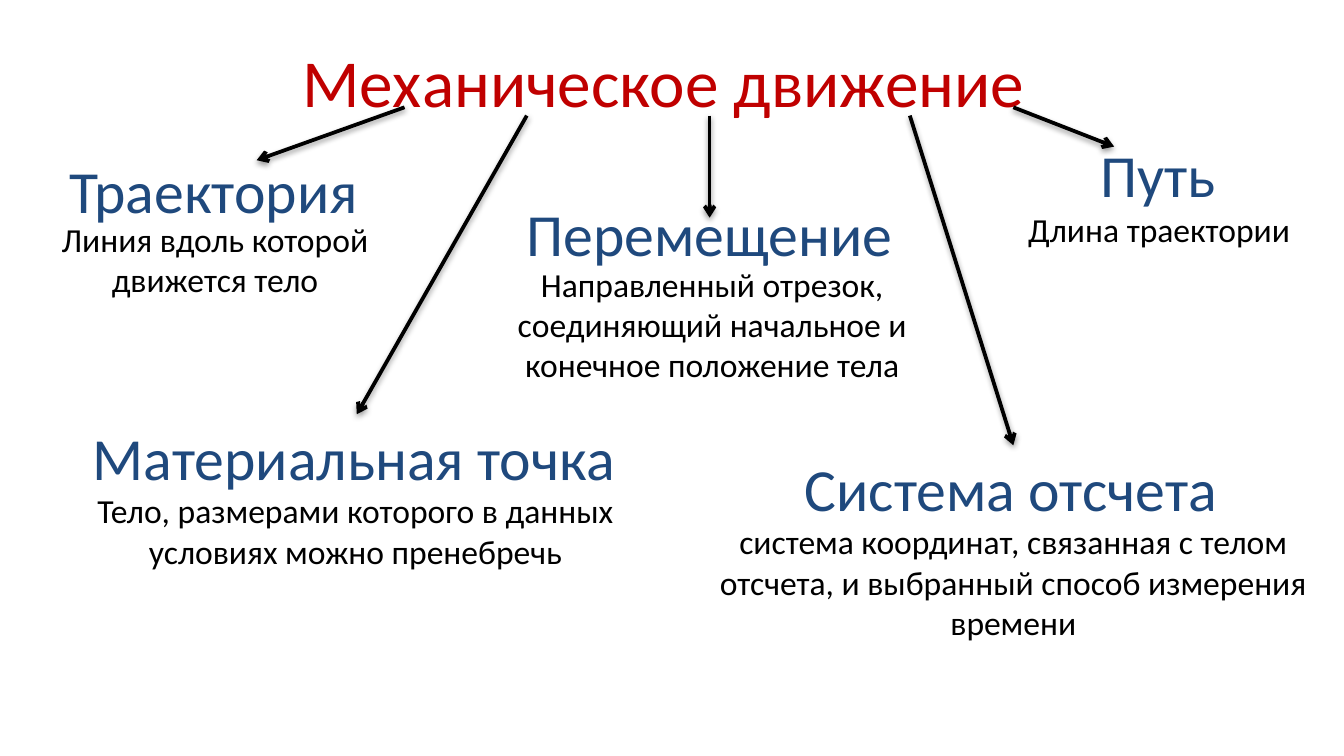
from dataclasses import dataclass
from typing import Optional

from lxml.etree import SubElement as Sub
from pptx import Presentation as Deck
from pptx.dml.color import RGBColor as Rgb
from pptx.enum.shapes import MSO_CONNECTOR as Link
from pptx.enum.text import MSO_ANCHOR as Anchor, MSO_AUTO_SIZE as Fit, PP_ALIGN as Align
from pptx.oxml.ns import qn
from pptx.util import Inches, Pt

RED = Rgb(0xC0, 0x00, 0x00)
BLUE = Rgb(0x1F, 0x49, 0x7D)
BLACK = Rgb(0x00, 0x00, 0x00)
FONT = "Calibri"
WIDE = Inches(10)
HIGH = WIDE * 9 // 16
HEAD = 11.4


@dataclass(frozen=True)
class Box:
    x: float
    y: float
    w: float
    h: float


@dataclass(frozen=True)
class Term:
    name: str
    top: Box
    note: str
    low: Box
    wrap: bool
    tail: tuple[float, float]
    tip: Optional[tuple[float, float]] = None


TERMS = [
    Term("Траектория", Box(4.2, 19.4, 23.7, HEAD),
         "Линия вдоль которой движется тело", Box(-0.4, 28.1, 32.8, 12.6),
         True, (30.1, 14.2), (19.1, 21.2)),
    Term("Путь", Box(80.9, 17.4, 10.7, HEAD),
         "Длина траектории", Box(75.4, 26.8, 21.7, 7.1),
         False, (75.4, 14.2), (82.9, 19.4)),
    Term("Перемещение", Box(38.2, 25.1, 29.5, HEAD),
         "Направленный отрезок, соединяющий начальное и конечное положение тела",
         Box(34.7, 34, 36.6, 18), True, (52.8, 15.3), (52.8, 28.8)),
    Term("Система отсчета", Box(58.9, 58.9, 33, HEAD),
         "система координат, связанная с телом отсчета, и выбранный способ измерения времени",
         Box(50.4, 68.1, 50, 18), True, (67.7, 15.3)),
    Term("Материальная точка", Box(5.9, 54.8, 41.3, HEAD),
         "Тело, размерами которого в данных условиях можно пренебречь",
         Box(6, 64, 40.9, 12.6), True, (39.2, 15.3)),
]


def across(part: float) -> int:
    return round(WIDE * part / 100)


def down(part: float) -> int:
    return round(HIGH * part / 100)


def write(shape, box: Box, text: str, size: int, tint: Rgb, wrap: bool, align) -> None:
    shape.left, shape.top = across(box.x), down(box.y)
    shape.width, shape.height = across(box.w), down(box.h)
    frame = shape.text_frame
    frame.word_wrap = wrap
    frame.auto_size = Fit.SHAPE_TO_FIT_TEXT
    frame.vertical_anchor = Anchor.TOP
    line = frame.paragraphs[0]
    line.alignment = align
    run = line.add_run()
    run.text = text
    run.font.name, run.font.size = FONT, Pt(size)
    run.font.color.rgb = tint


def label(slide, box: Box, text: str, size: int, tint: Rgb, wrap: bool, align):
    shape = slide.shapes.add_textbox(0, 0, 0, 0)
    write(shape, box, text, size, tint, wrap, align)
    return shape


def arrow(slide, term: Term, head) -> None:
    tip = term.tip or (term.top.x + term.top.w / 2, term.top.y)
    line = slide.shapes.add_connector(
        Link.STRAIGHT, across(term.tail[0]), down(term.tail[1]),
        across(tip[0]), down(tip[1]))
    if term.tip is None:
        line.end_connect(head, 0)
    line.line.color.rgb = BLACK
    line.line.width = Pt(2)
    props = line._element.spPr
    Sub(props.find(qn("a:ln")), qn("a:tailEnd"), type="arrow")
    shade = Sub(Sub(props, qn("a:effectLst")), qn("a:outerShdw"),
                blurRad=str(Pt(3.1)), dist=str(Pt(1.6)), dir="5400000", rotWithShape="0")
    tint = Sub(shade, qn("a:srgbClr"), val=str(BLACK))
    Sub(tint, qn("a:alpha"), val="38000")


def main() -> None:
    deck = Deck()
    deck.slide_width, deck.slide_height = WIDE, HIGH
    slide = deck.slides.add_slide(deck.slide_layouts[5])
    write(slide.shapes.title, Box(21.5, 4.4, 56.3, 12.6), "Механическое движение",
          36, RED, False, Align.LEFT)
    heads = [label(slide, term.top, term.name, 32, BLUE, False, Align.LEFT)
             for term in TERMS]
    for term in TERMS:
        label(slide, term.low, term.note, 18, BLACK, term.wrap, Align.CENTER)
    for term, head in zip(TERMS, heads):
        arrow(slide, term, head)
    deck.save("out.pptx")


if __name__ == "__main__":
    main()
